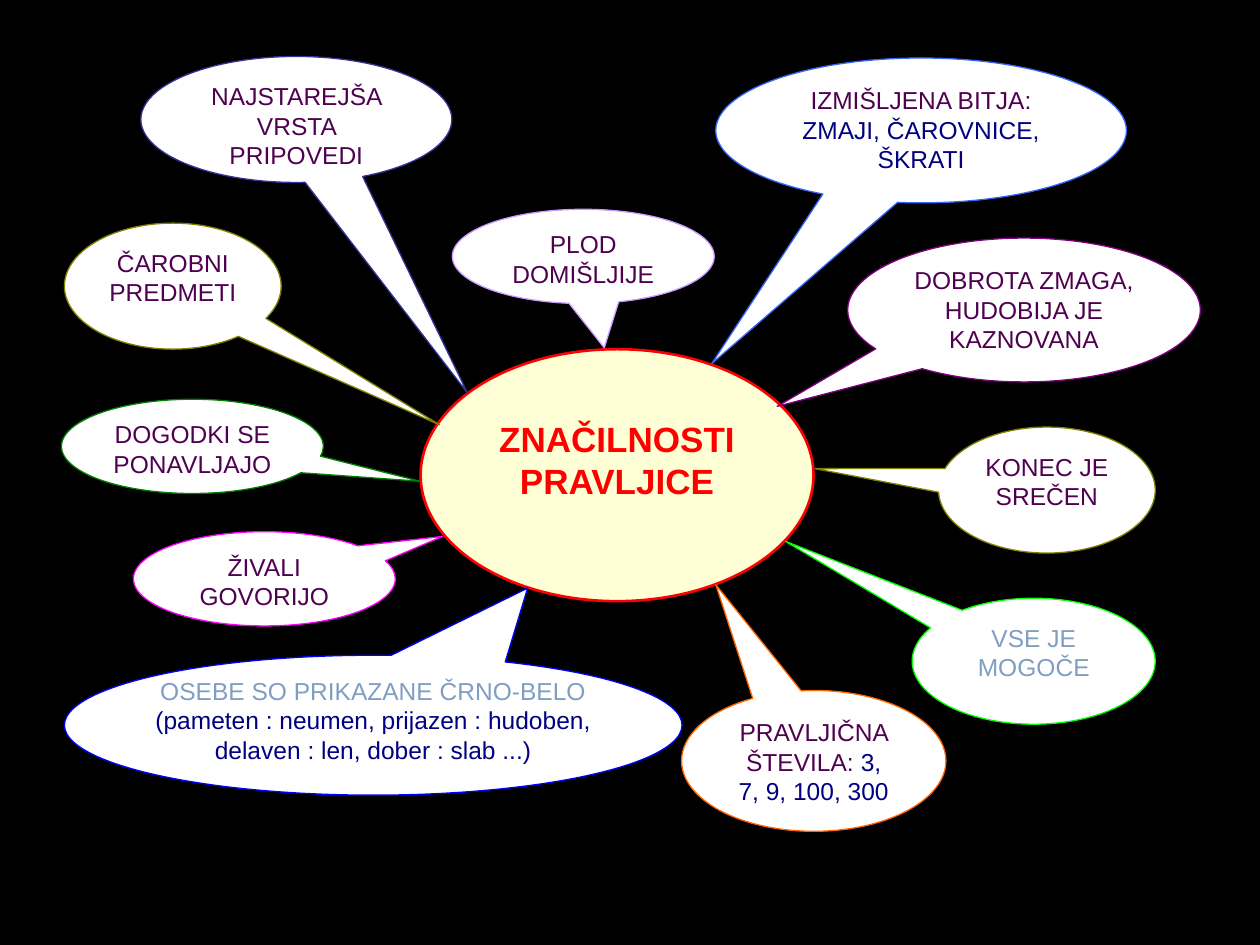
import pptx
import pptx.dml.color
import pptx.enum.shapes
import pptx.enum.text
import pptx.util

Cm, Pt = pptx.util.Cm, pptx.util.Pt
MSO_SHAPE = pptx.enum.shapes.MSO_SHAPE
PLUM, NAVY, STEEL = "500050", "000080", "809EC2"


def paint(color_format, value):
    color_format.rgb = pptx.dml.color.RGBColor.from_string(value)


def add_bubble(shape_type, box, fill, line, width, paragraphs, size, bold=False):
    """Add a shape whose paragraphs are lists of (text, colour) runs."""
    sp = slide.shapes.add_shape(shape_type, *[Cm(v) for v in box])
    sp.shadow.inherit = False
    sp.fill.solid()
    paint(sp.fill.fore_color, fill)
    paint(sp.line.color, line)
    sp.line.width = Pt(width)
    tf = sp.text_frame
    tf.word_wrap = True
    tf.vertical_anchor = pptx.enum.text.MSO_ANCHOR.TOP
    for i, runs in enumerate(paragraphs):
        p = tf.add_paragraph() if i else tf.paragraphs[0]
        p.alignment = pptx.enum.text.PP_ALIGN.CENTER
        p.font.name = "Arial"
        p.font.size = Pt(size)
        p.font.bold = bold
        for text, color in runs:
            r = p.add_run()
            r.text = text
            paint(r.font.color, color)
    return sp


prs = pptx.Presentation()
prs.slide_width, prs.slide_height = Cm(25.4), Cm(19.05)
slide = prs.slides.add_slide(prs.slide_layouts[6])
slide.background.fill.solid()
paint(slide.background.fill.fore_color, "000000")

topic = add_bubble(MSO_SHAPE.OVAL, (8.48, 7.04, 7.92, 5.08), "FFFFD5", "FF0000", 1.5,
                   [[("ZNAČILNOSTI PRAVLJICE", "FF0000")]], 20, True)
topic.text_frame.margin_top = Cm(0.64)

# Box, tip offset from the centre as a share of the size, outline, paragraphs
callouts = [
    ((1.3, 13.21, 12.45, 2.82), (0.25, -0.98), "0000FF",
     [[("OSEBE SO PRIKAZANE ČRNO-BELO", STEEL)],
      [("(pameten : neumen, prijazen : hudoben, delaven : len, dober : slab ...)", NAVY)]]),
    ((2.84, 1.14, 6.27, 2.54), (0.55, 2.17), "333399",
     [[("NAJSTAREJŠA VRSTA PRIPOVEDI", PLUM)]]),
    ((9.12, 4.22, 5.28, 1.9), (0.08, 0.97), "CC99FF",
     [[("PLOD DOMIŠLJIJE", PLUM)]]),
    ((18.39, 12.06, 4.9, 2.54), (-1.02, -0.95), "00FF00",
     [[("VSE JE MOGOČE", STEEL)]]),
    ((17.09, 4.8, 7.11, 2.9), (-0.7, 0.67), "800080",
     [[("DOBROTA ZMAGA, HUDOBIJA JE KAZNOVANA", PLUM)]]),
    ((14.43, 1.17, 8.28, 2.92), (-0.51, 1.61), "3366FF",
     [[("IZMIŠLJENA BITJA:", PLUM)], [("ZMAJI, ČAROVNICE, ŠKRATI", NAVY)]]),
    ((2.69, 10.72, 5.28, 1.9), (0.68, -0.45), "FF00FF",
     [[("ŽIVALI GOVORIJO", PLUM)]]),
    ((13.74, 13.92, 5.33, 2.84), (-0.37, -1.25), "FF6600",
     [[("PRAVLJIČNA ŠTEVILA: ", PLUM), ("3, 7, 9, 100, 300", NAVY)]]),
    ((1.24, 8.05, 5.28, 1.9), (0.87, 0.37), "008000",
     [[("DOGODKI SE PONAVLJAJO", PLUM)]]),
    ((18.92, 8.61, 4.37, 2.54), (-1.07, -0.17), "808000",
     [[("KONEC JE SREČEN", PLUM)]]),
    ((1.3, 4.5, 4.37, 2.54), (1.23, 1.1), "808000",
     [[("ČAROBNI PREDMETI", PLUM)]]),
]
for i, (box, tip, line, paragraphs) in enumerate(callouts):
    sp = add_bubble(MSO_SHAPE.OVAL_CALLOUT, box, "FFFFFF", line, 0.75, paragraphs, 14)
    sp.adjustments[0], sp.adjustments[1] = tip
    if i == 0:  # the longest text needs the full width
        tf = sp.text_frame
        tf.margin_left = tf.margin_right = tf.margin_top = tf.margin_bottom = 0

prs.save("out.pptx")
